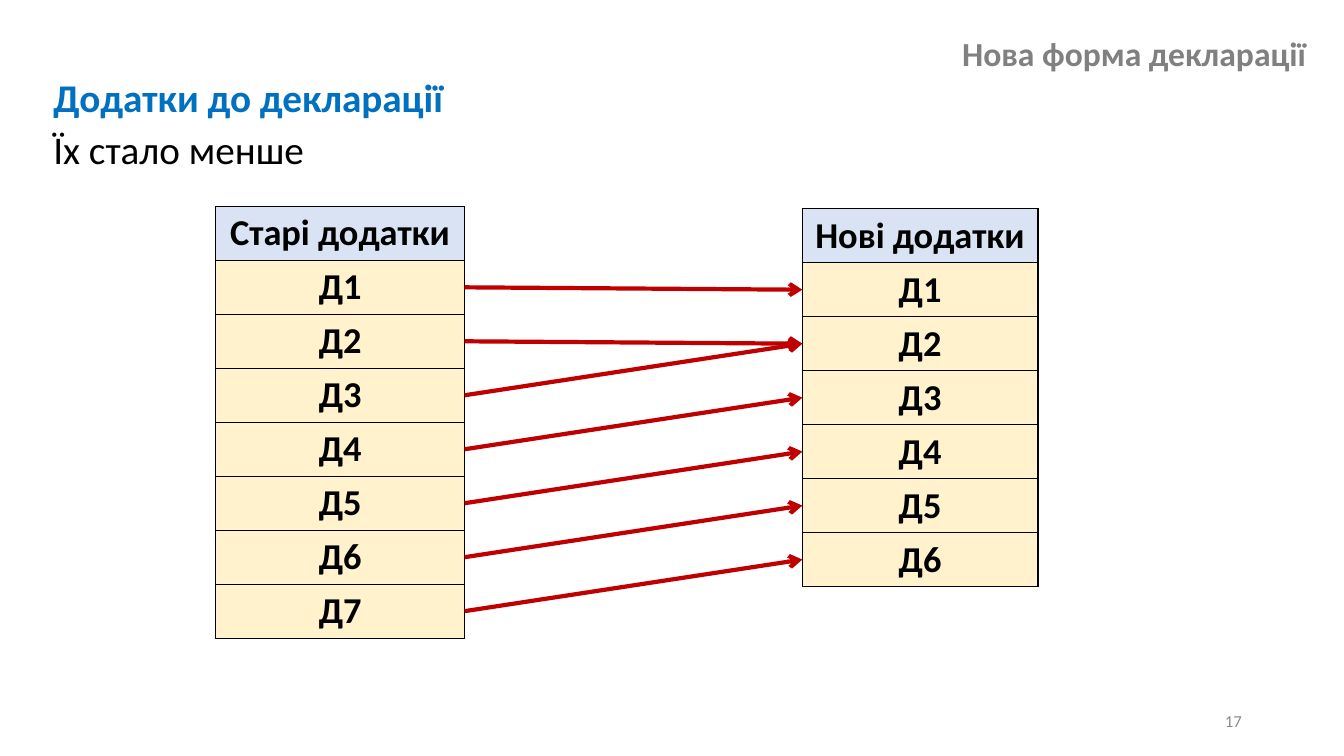
from lxml.etree import SubElement
from pptx import Presentation
from pptx.dml.color import RGBColor
from pptx.enum.shapes import MSO_CONNECTOR
from pptx.enum.text import MSO_ANCHOR, MSO_AUTO_SIZE, PP_ALIGN
from pptx.oxml.ns import qn
from pptx.util import Cm, Pt

BLACK = RGBColor(0x00, 0x00, 0x00)
GRAY = RGBColor(0x80, 0x80, 0x80)
NUMBER_GRAY = RGBColor(0x8C, 0x8C, 0x8C)
BLUE = RGBColor(0x00, 0x70, 0xC0)
RED = RGBColor(0xC0, 0x00, 0x00)
HEADER_FILL = RGBColor(0xDA, 0xE3, 0xF3)
ROW_FILL = RGBColor(0xFF, 0xF2, 0xCC)

SECTION = "Нова форма декларації"
HEADING = "Додатки до декларації"
SUMMARY = "Їх стало менше"
PAGE_NUMBER = "17"
OLD = {"header": "Старі додатки", "count": 7, "left": 5.44, "top": 5.2, "width": 6.27}
NEW = {"header": "Нові додатки", "count": 6, "left": 20.22, "top": 5.26, "width": 5.94}
OLD_TO_NEW = {1: 1, 2: 2, 3: 2, 4: 3, 5: 4, 6: 5, 7: 6}
ROW_HEIGHT = 1.36


def write(paragraph, text, size, color=BLACK, bold=False, align=PP_ALIGN.LEFT, before=0):
    paragraph.alignment = align
    paragraph.space_before = Pt(before)
    run = paragraph.add_run()
    run.text = text
    run.font.name = "Calibri"
    run.font.size = Pt(size)
    run.font.bold = bold
    run.font.color.rgb = color


def place(shape, left, top, width, height):
    shape.left, shape.top = Cm(left), Cm(top)
    shape.width, shape.height = Cm(width), Cm(height)


def remove_bullet(paragraph):
    properties = paragraph._p.get_or_add_pPr()
    properties.set("marL", "0")
    properties.set("indent", "0")
    SubElement(properties, qn("a:buNone"))


def add_borders(cell):
    properties = cell._tc.get_or_add_tcPr()
    for side in ("lnL", "lnR", "lnT", "lnB"):
        line = SubElement(properties, qn(f"a:{side}"), w=str(Pt(1)))
        fill = SubElement(line, qn("a:solidFill"))
        SubElement(fill, qn("a:srgbClr"), val=str(BLACK))


def add_list_table(slide, column):
    labels = [column["header"]] + [f"Д{number}" for number in range(1, column["count"] + 1)]
    table = slide.shapes.add_table(
        len(labels), 1, Cm(column["left"]), Cm(column["top"]),
        Cm(column["width"]), Cm(ROW_HEIGHT * len(labels))).table
    table.first_row = table.horz_banding = False
    for index, label in enumerate(labels):
        table.rows[index].height = Cm(ROW_HEIGHT)
        cell = table.cell(index, 0)
        cell.margin_top = cell.margin_bottom = 0
        cell.margin_left = cell.margin_right = Cm(0.1)
        cell.vertical_anchor = MSO_ANCHOR.MIDDLE
        add_borders(cell)
        cell.fill.solid()
        cell.fill.fore_color.rgb = ROW_FILL if index else HEADER_FILL
        write(cell.text_frame.paragraphs[0], label, 26, bold=True, align=PP_ALIGN.CENTER)


def row_middle(column, number):
    return Cm(column["top"] + ROW_HEIGHT * (number + 0.5))


def add_arrow(slide, old_number, new_number):
    arrow = slide.shapes.add_connector(
        MSO_CONNECTOR.STRAIGHT,
        Cm(OLD["left"] + OLD["width"]), row_middle(OLD, old_number),
        Cm(NEW["left"]), row_middle(NEW, new_number))
    arrow.line.color.rgb = RED
    arrow.line.width = Pt(3)
    SubElement(arrow.line._get_or_add_ln(), qn("a:tailEnd"), type="arrow")
    SubElement(arrow._element.spPr, qn("a:effectLst"))


def main():
    presentation = Presentation()
    presentation.slide_width, presentation.slide_height = Cm(33.87), Cm(19.05)
    slide = presentation.slides.add_slide(presentation.slide_layouts[1])

    title = slide.shapes.title
    place(title, 23.9, 0.71, 9.27, 1.27)
    title.text_frame.word_wrap = False
    title.text_frame.auto_size = MSO_AUTO_SIZE.NONE
    write(title.text_frame.paragraphs[0], SECTION, 24, GRAY, True, PP_ALIGN.RIGHT)

    body = slide.placeholders[1]
    place(body, 1.09, 1.73, 32.03, 2.77)
    frame = body.text_frame
    frame.auto_size = MSO_AUTO_SIZE.NONE
    write(frame.paragraphs[0], HEADING, 28, BLUE, True, before=3)
    write(frame.add_paragraph(), SUMMARY, 28, before=3)
    for paragraph in frame.paragraphs:
        remove_bullet(paragraph)

    for column in (OLD, NEW):
        add_list_table(slide, column)
    for old_number, new_number in OLD_TO_NEW.items():
        add_arrow(slide, old_number, new_number)

    page = slide.shapes.add_textbox(Cm(23.93), Cm(17.65), Cm(7.62), Cm(1.02))
    page.text_frame.word_wrap = True
    page.text_frame.vertical_anchor = MSO_ANCHOR.MIDDLE
    write(page.text_frame.paragraphs[0], PAGE_NUMBER, 12, NUMBER_GRAY, align=PP_ALIGN.RIGHT)

    presentation.save("out.pptx")


if __name__ == "__main__":
    main()
